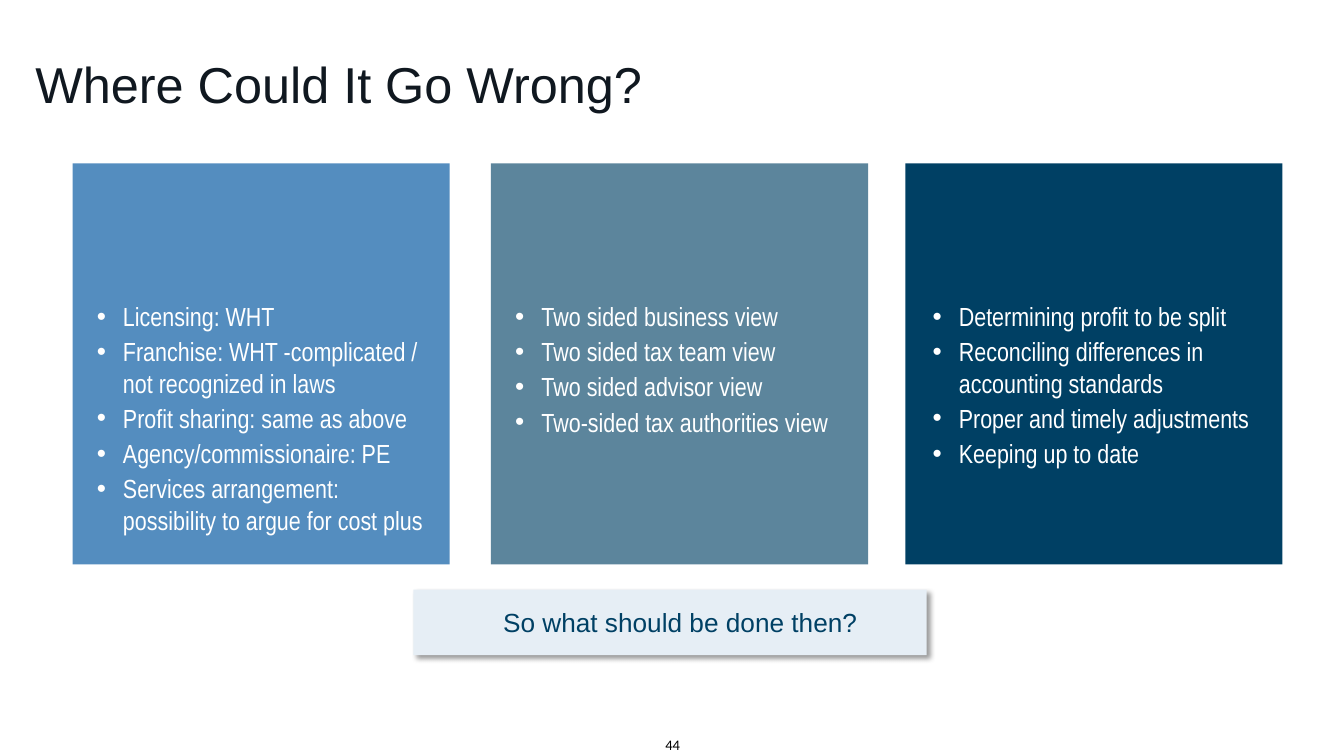
from dataclasses import dataclass

from lxml import etree
from pptx import Presentation
from pptx.dml.color import RGBColor
from pptx.enum.shapes import MSO_SHAPE
from pptx.enum.text import MSO_ANCHOR, MSO_AUTO_SIZE, PP_ALIGN
from pptx.oxml.ns import qn
from pptx.util import Inches, Pt

RECT = MSO_SHAPE.RECTANGLE
TOP, MIDDLE = MSO_ANCHOR.TOP, MSO_ANCHOR.MIDDLE
NO_FIT = MSO_AUTO_SIZE.NONE
LEFT, CENTER = PP_ALIGN.LEFT, PP_ALIGN.CENTER


@dataclass(frozen=True)
class Theme:
    ink: str = "101820"
    black: str = "000000"
    white: str = "FFFFFF"
    blue: str = "548DBF"
    slate: str = "5C859C"
    navy: str = "004064"
    pale: str = "E6EEF5"
    title: float = 36
    body: float = 18.7
    number: float = 18


T = Theme()


def write(p, text, size, color, font="Arial", align=LEFT):
    p.alignment = align
    r = p.add_run()
    r.text = text
    r.font.name = font
    r.font.size = Pt(size)
    r.font.bold = False
    r.font.color.rgb = RGBColor.from_string(color)
    return r


def add_box(shapes, x, y, w, h, fill):
    sp = shapes.add_shape(RECT, Inches(x), Inches(y), Inches(w), Inches(h))
    sp.shadow.inherit = False
    sp.fill.solid()
    sp.fill.fore_color.rgb = RGBColor.from_string(fill)
    sp.line.fill.background()
    return sp


prs = Presentation()
prs.slide_width, prs.slide_height = Inches(13.33), Inches(7.5)
s = prs.slides.add_slide(prs.slide_layouts[4])

title = s.shapes.title
title.left, title.top = Inches(0.24), Inches(0.47)
title.width, title.height = Inches(13.09), Inches(0.72)
tf = title.text_frame
tf.auto_size = NO_FIT
tf.vertical_anchor = MIDDLE
tf.margin_left = tf.margin_right = Inches(0.11)
tf.margin_top = tf.margin_bottom = Inches(0.06)
write(tf.paragraphs[0], "Where Could It Go Wrong?", T.title, T.ink)

columns = [
    (0.72, T.blue, 0.86, 3.54, [
        "Licensing: WHT",
        "Franchise: WHT -complicated / not recognized in laws",
        "Profit sharing: same as above",
        "Agency/commissionaire: PE",
        "Services arrangement: possibility to argue for cost plus",
    ]),
    (4.87, T.slate, 5.01, 3.36, [
        "Two sided business view",
        "Two sided tax team view",
        "Two sided advisor view",
        "Two-sided tax authorities view",
    ]),
    (8.98, T.navy, 9.15, 3.36, [
        "Determining profit to be split",
        "Reconciling differences in accounting standards",
        "Proper and timely adjustments",
        "Keeping up to date",
    ]),
]
bodies = [ph for ph in s.placeholders if ph.placeholder_format.idx in (1, 2, 3, 4)]
spare = bodies.pop()
spare._element.getparent().remove(spare._element)

for body, (x, fill, text_x, text_w, items) in zip(bodies, columns):
    panel = add_box(s.shapes, x, 1.62, 3.74, 3.98, fill)
    s.shapes._spTree.insert(2, panel._element)
    body.left, body.top = Inches(text_x), Inches(2.93)
    body.width, body.height = Inches(text_w), Inches(2.72)
    tf = body.text_frame
    tf.auto_size = NO_FIT
    tf.vertical_anchor = TOP
    for i, item in enumerate(items):
        p = tf.add_paragraph() if i else tf.paragraphs[0]
        write(p, item, T.body, T.white, font="Arial Narrow")
        p.space_before, p.space_after = Pt(0), Pt(2.7)
        pPr = p._p.get_or_add_pPr()
        pPr.set("marL", str(Inches(0.26)))
        pPr.set("indent", str(-Inches(0.26)))
        color = etree.SubElement(pPr, qn("a:buClr"))
        etree.SubElement(color, qn("a:srgbClr"), val=T.white)
        etree.SubElement(pPr, qn("a:buFont"), typeface="Arial")
        etree.SubElement(pPr, qn("a:buChar"), char="•")

question = add_box(s.shapes, 4.1, 5.85, 5.09, 0.65, T.pale)
effects = question._element.spPr.find(qn("a:effectLst"))
shadow = etree.SubElement(effects, qn("a:outerShdw"), blurRad=str(Pt(4)),
                          dist=str(Pt(3)), dir="2700000", algn="tl", rotWithShape="0")
color = etree.SubElement(shadow, qn("a:srgbClr"), val=T.black)
etree.SubElement(color, qn("a:alpha"), val="40000")
tf = question.text_frame
tf.vertical_anchor = MIDDLE
tf.margin_left = Inches(0.3)
write(tf.paragraphs[0], "So what should be done then?", T.body, T.navy, align=CENTER)

number = s.shapes.add_textbox(Inches(6.5), Inches(7.22), Inches(0.4), Inches(0.3))
tf = number.text_frame
tf.word_wrap = False
r = write(tf.paragraphs[0], "44", T.number, T.black, font="Calibri")
r.font._element.set("baseline", "30000")

prs.save("out.pptx")
